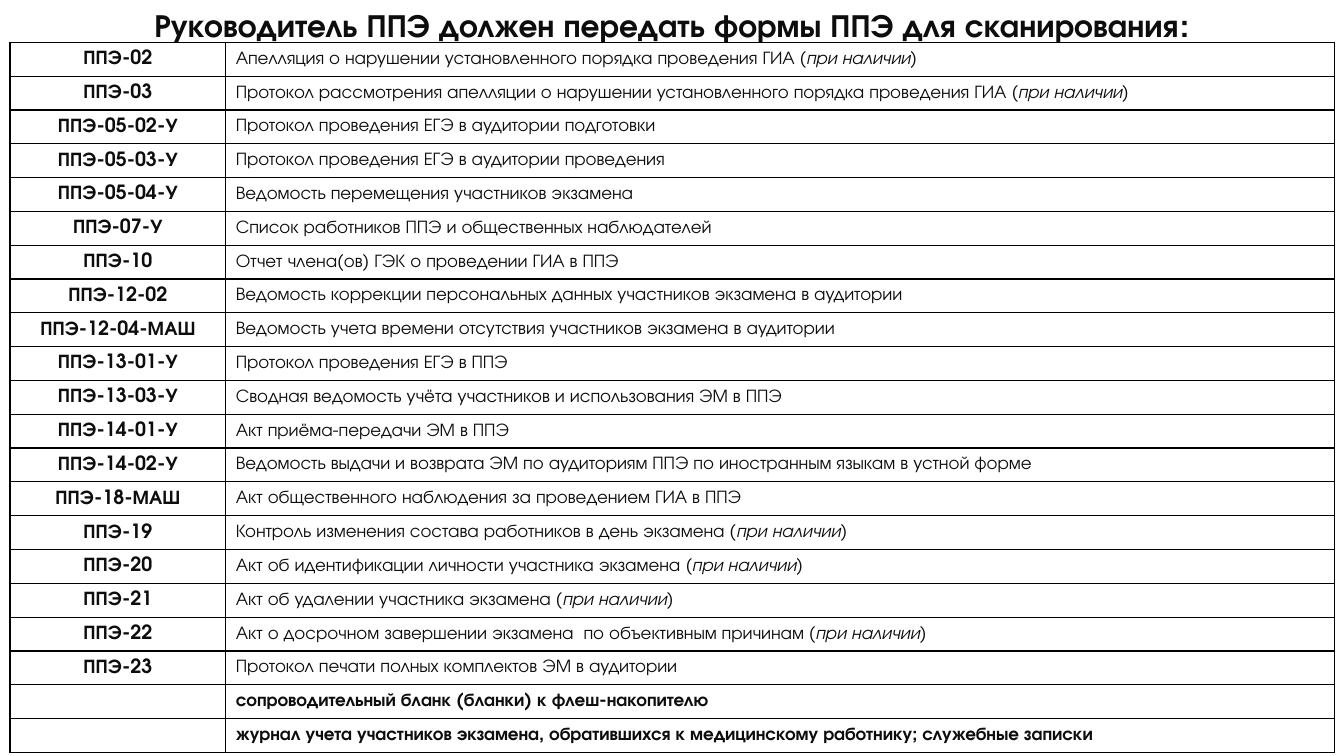
"""Build a slide that lists the exam forms to hand over for scanning."""
from lxml.etree import SubElement as Sub
from pptx import Presentation
from pptx.dml.color import RGBColor as Rgb
from pptx.enum.text import MSO_ANCHOR as Anchor, MSO_AUTO_SIZE as Fit, PP_ALIGN as Align
from pptx.oxml.ns import qn
from pptx.util import Inches, Pt

FONT = "TeX Gyre Adventor"
HUES = {"text": "0D0D0D", "line": "000000", "back": "FFFFFF"}
TITLE = "Руководитель ППЭ должен передать формы ППЭ для сканирования:"
FORMS = [
    ("ППЭ-02", "Апелляция о нарушении установленного порядка проведения ГИА (*при наличии*)"),
    ("ППЭ-03", "Протокол рассмотрения апелляции о нарушении установленного порядка "
               "проведения ГИА (*при наличии*)"),
    ("ППЭ-05-02-У", "Протокол проведения ЕГЭ в аудитории подготовки"),
    ("ППЭ-05-03-У", "Протокол проведения ЕГЭ в аудитории проведения"),
    ("ППЭ-05-04-У", "Ведомость перемещения участников экзамена"),
    ("ППЭ-07-У", "Список работников ППЭ и общественных наблюдателей"),
    ("ППЭ-10", "Отчет члена(ов) ГЭК о проведении ГИА в ППЭ"),
    ("ППЭ-12-02", "Ведомость коррекции персональных данных участников экзамена в аудитории"),
    ("ППЭ-12-04-МАШ", "Ведомость учета времени отсутствия участников экзамена в аудитории"),
    ("ППЭ-13-01-У", "Протокол проведения ЕГЭ в ППЭ"),
    ("ППЭ-13-03-У", "Сводная ведомость учёта участников и использования ЭМ в ППЭ"),
    ("ППЭ-14-01-У", "Акт приёма-передачи ЭМ в ППЭ"),
    ("ППЭ-14-02-У", "Ведомость выдачи и возврата ЭМ по аудиториям ППЭ по иностранным "
                    "языкам в устной форме"),
    ("ППЭ-18-МАШ", "Акт общественного наблюдения за проведением ГИА в ППЭ"),
    ("ППЭ-19", "Контроль изменения состава работников в день экзамена *(при наличии)*"),
    ("ППЭ-20", "Акт об идентификации личности участника экзамена (*при наличии*)"),
    ("ППЭ-21", "Акт об удалении участника экзамена *(при наличии)*"),
    ("ППЭ-22", "Акт о досрочном завершении экзамена  по объективным причинам *(при наличии)*"),
    ("ППЭ-23", "Протокол печати полных комплектов ЭМ в аудитории"),
    ("", "сопроводительный бланк (бланки) к флеш-накопителю"),
    ("", "журнал учета участников экзамена, обратившихся к медицинскому работнику; "
         "служебные записки"),
]


def write(frame, text, size=13, bold=False, align=Align.LEFT):
    """Fill a text frame, with parts between asterisks in italics."""
    para = frame.paragraphs[0]
    para.alignment = align
    for pos, part in enumerate(text.split("*")):
        if part:
            run = para.add_run()
            run.text = part
            font = run.font
            font.name, font.size = FONT, Pt(size)
            font.bold, font.italic = bold, pos % 2 == 1
            font.color.rgb = Rgb.from_string(HUES["text"])


class Page:
    """Hold the current slide and place elements by percent of its size."""

    def __init__(self, deck):
        """Add a title-only slide to the deck."""
        self.wide, self.high = deck.slide_width, deck.slide_height
        self.slide = deck.slides.add_slide(deck.slide_layouts[5])
        fill = self.slide.background.fill
        fill.solid()
        fill.fore_color.rgb = Rgb.from_string(HUES["back"])

    def across(self, share):
        """Turn a percent of the width into a length."""
        return round(self.wide * share / 100)

    def down(self, share):
        """Turn a percent of the height into a length."""
        return round(self.high * share / 100)

    def title(self, text, x, y, w, h):
        """Move, format and fill the title."""
        head = self.slide.shapes.title
        head.left, head.top = self.across(x), self.down(y)
        head.width, head.height = self.across(w), self.down(h)
        frame = head.text_frame
        frame.word_wrap, frame.auto_size = True, Fit.NONE
        frame.vertical_anchor = Anchor.MIDDLE
        write(frame, text, size=23, bold=True, align=Align.CENTER)

    def edge(self, cell, width=1):
        """Draw the four borders of a cell."""
        props = cell._tc.get_or_add_tcPr()
        for side in ("lnL", "lnR", "lnT", "lnB"):
            line = Sub(props, qn("a:" + side), w=str(Pt(width)))
            Sub(Sub(line, qn("a:solidFill")), qn("a:srgbClr"), val=HUES["line"])

    def cell(self, cell, text, **form):
        """Format and fill one cell."""
        self.edge(cell)
        cell.fill.background()
        cell.vertical_anchor = Anchor.MIDDLE
        cell.margin_top = cell.margin_bottom = 0
        write(cell.text_frame, text, **form)

    def table(self, rows, x, y, cols, h):
        """Add a table with equal rows of a code and a name."""
        shape = self.slide.shapes.add_table(
            len(rows), len(cols), self.across(x), self.down(y),
            self.across(sum(cols)), self.down(h))
        grid = shape.table
        grid.first_row = grid.horz_banding = False
        for col, share in zip(grid.columns, cols):
            col.width = self.across(share)
        for num, (code, name) in enumerate(rows):
            grid.rows[num].height = self.down(h / len(rows))
            self.cell(grid.cell(num, 0), code, size=14, bold=True, align=Align.CENTER)
            self.cell(grid.cell(num, 1), name, bold=not code)


def main():
    """Build and save the deck."""
    deck = Presentation()
    deck.slide_width, deck.slide_height = Inches(13.33), Inches(7.5)
    page = Page(deck)
    page.title(TITLE, x=1.73, y=0, w=96.55, h=6.5)
    page.table(FORMS, x=0.75, y=5.6, cols=(16.05, 82.5), h=94)
    deck.save("out.pptx")


if __name__ == "__main__":
    main()
